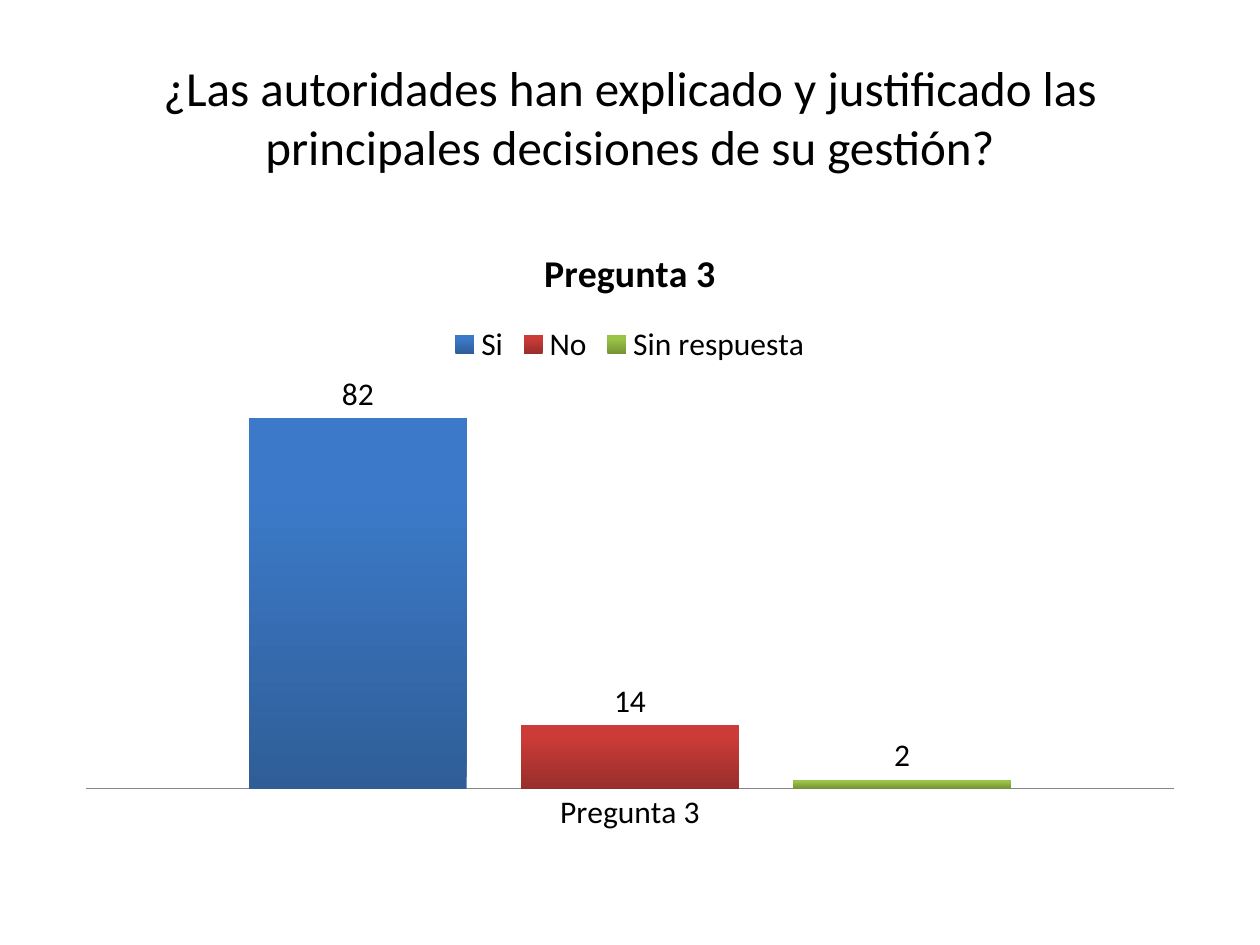
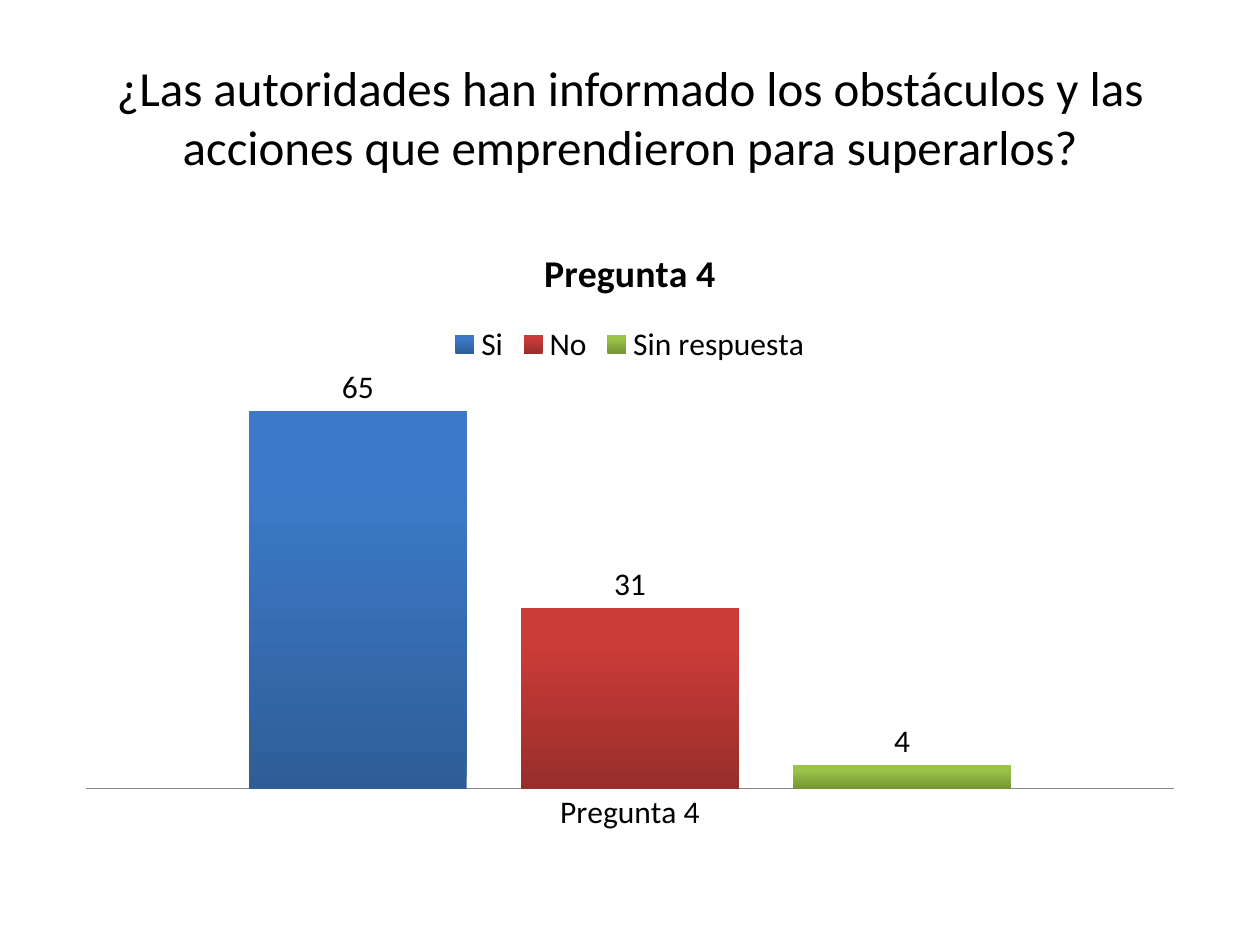
from dataclasses import dataclass

from pptx import Presentation
from pptx import util as u
from pptx.chart.data import CategoryChartData
from pptx.dml.color import RGBColor
from pptx.enum import chart as ch, text

PX = 9144  # EMU per px, 100 px to the inch


@dataclass(frozen=True)
class Theme:
    font: str = "Calibri"
    ink: str = "000000"
    axis: str = "868686"
    title_size: float = 28
    chart_title_size: float = 21.6
    chart_size: float = 18
    # answer: (colour at the foot of the bar, colour at its top)
    answers = {
        "Si": ("2F5E97", "3C7AC9"),
        "No": ("982E2B", "CB3B37"),
        "Sin respuesta": ("769535", "9BC348"),
    }


theme = Theme()


def set_font(font, size, bold=False):
    font.name = theme.font
    font.size = u.Pt(size)
    font.bold = bold
    font.color.rgb = RGBColor.from_string(theme.ink)


def box(*lengths):
    """Turn px lengths into EMU."""
    return [n * PX for n in lengths]


questions = [
    ("Pregunta 3",
     "¿Las autoridades han explicado y justificado las principales decisiones de su gestión?",
     (82, 14, 2)),
    ("Pregunta 4",
     "¿Las autoridades han informado los obstáculos y las acciones que emprendieron para superarlos?",
     (65, 31, 4)),
]

prs = Presentation()
prs.slide_width, prs.slide_height = box(1000, 750)
title_only = prs.slide_layouts[5]

for label, question, counts in questions:
    s = prs.slides.add_slide(title_only)

    # Question
    title = s.shapes.title
    title.left, title.top, title.width, title.height = box(50, 30, 900, 125)
    tf = title.text_frame
    tf.word_wrap = True
    tf.auto_size = text.MSO_AUTO_SIZE.NONE
    tf.vertical_anchor = text.MSO_ANCHOR.MIDDLE
    p = tf.paragraphs[0]
    p.alignment = text.PP_ALIGN.CENTER
    r = p.add_run()
    r.text = question
    set_font(r.font, theme.title_size)

    # Answers
    data = CategoryChartData()
    data.categories = [label]
    for answer, count in zip(theme.answers, counts):
        data.add_series(answer, [count])
    chart = s.shapes.add_chart(
        ch.XL_CHART_TYPE.COLUMN_CLUSTERED, *box(50, 175, 900, 495), data).chart
    set_font(chart.font, theme.chart_size)

    chart.has_title = True
    chart.chart_title.include_in_layout = False
    r = chart.chart_title.text_frame.paragraphs[0].add_run()
    r.text = label
    set_font(r.font, theme.chart_title_size, bold=True)

    chart.has_legend = True
    chart.legend.position = ch.XL_LEGEND_POSITION.TOP
    chart.legend.include_in_layout = False

    chart.value_axis.visible = False
    chart.value_axis.has_major_gridlines = False
    chart.value_axis.minimum_scale = 0
    category_axis = chart.category_axis
    category_axis.major_tick_mark = ch.XL_TICK_MARK.NONE
    category_axis.format.line.color.rgb = RGBColor.from_string(theme.axis)
    category_axis.format.line.width = u.Pt(0.75)

    plot = chart.plots[0]
    plot.gap_width = 150
    plot.overlap = -25
    plot.vary_by_categories = False
    plot.has_data_labels = True
    plot.data_labels.show_value = True
    plot.data_labels.position = ch.XL_LABEL_POSITION.OUTSIDE_END

    for series, colours in zip(plot.series, theme.answers.values()):
        series.invert_if_negative = False
        fill = series.format.fill
        fill.gradient()
        fill.gradient_angle = 90
        for stop, colour, position in zip(fill.gradient_stops, colours, (0, 0.8)):
            stop.color.rgb = RGBColor.from_string(colour)
            stop.position = position

prs.save("out.pptx")
